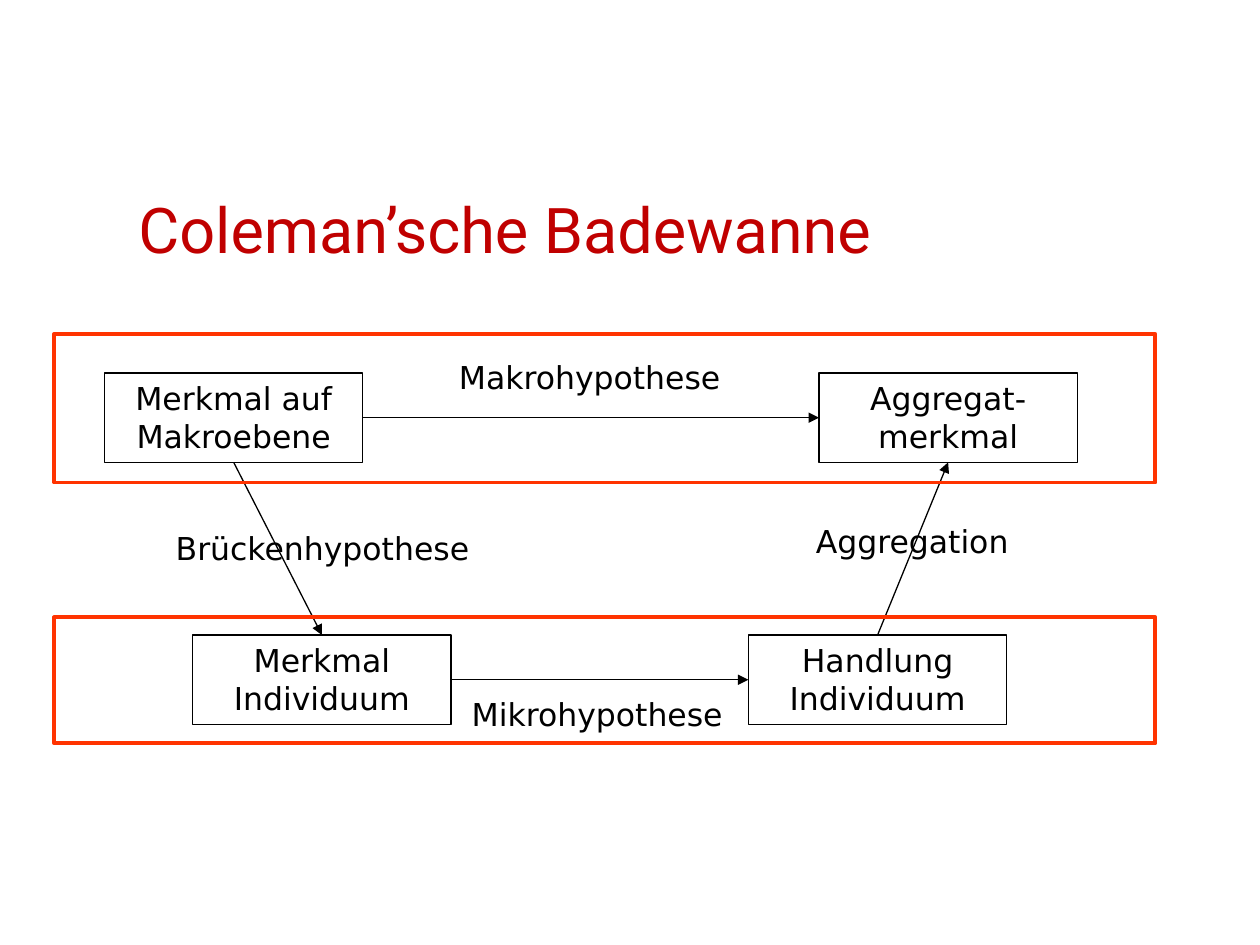
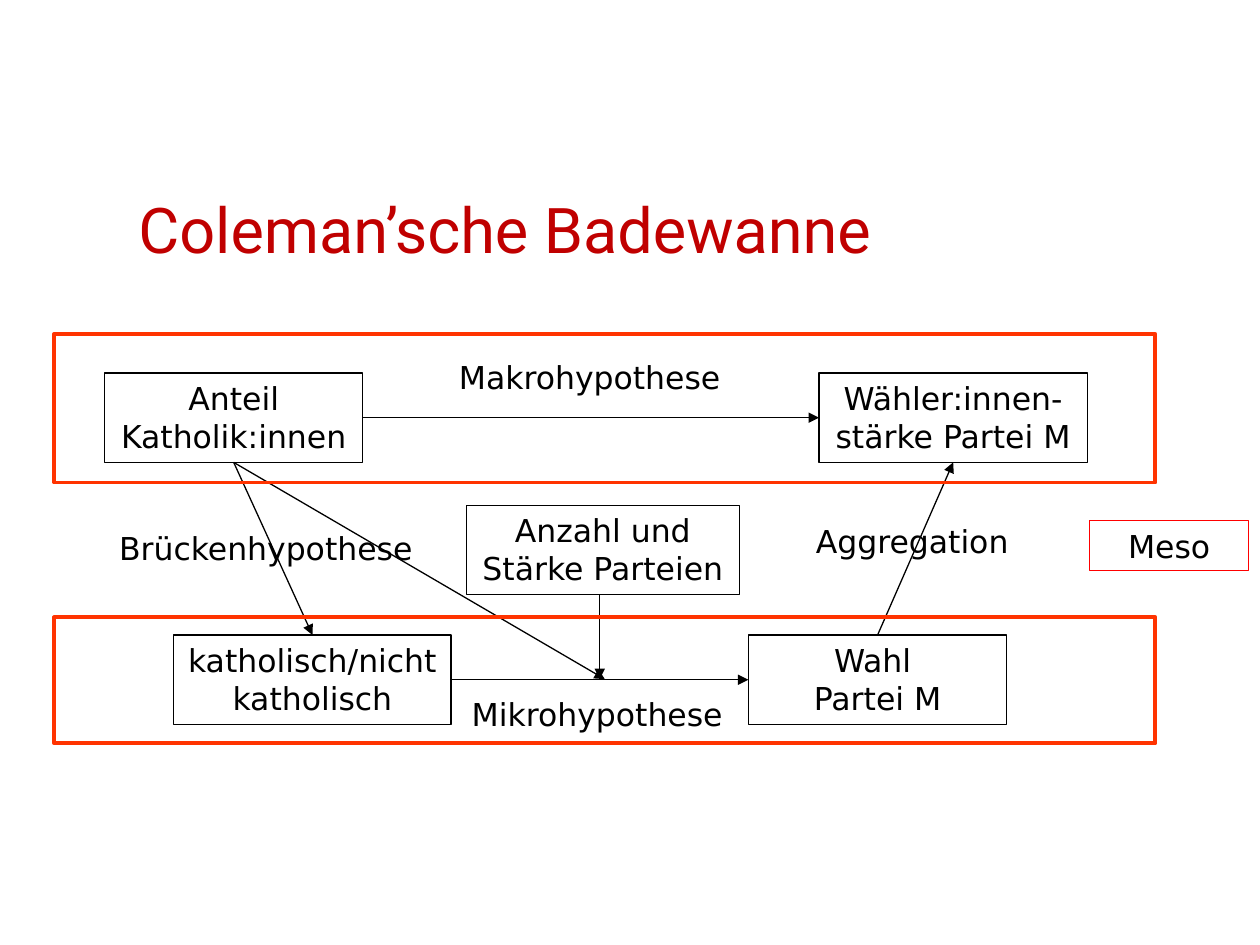
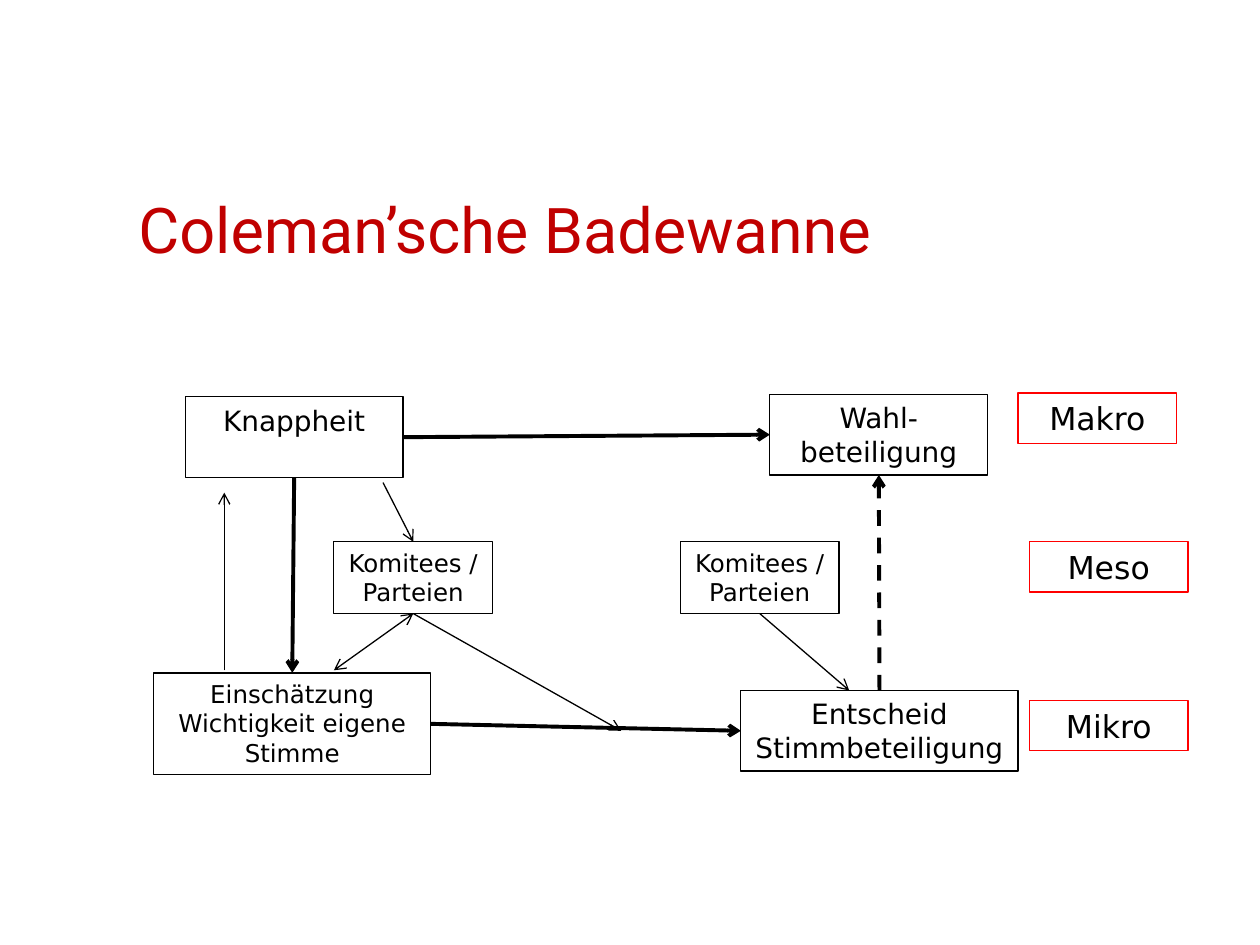
from lxml import etree
from pptx import Presentation
from pptx.dml.color import RGBColor
from pptx.enum.dml import MSO_LINE
from pptx.enum.shapes import MSO_CONNECTOR, MSO_SHAPE
from pptx.enum.text import MSO_ANCHOR, PP_ALIGN
from pptx.oxml.ns import qn
from pptx.util import Inches, Pt

STRAIGHT = MSO_CONNECTOR.STRAIGHT
RECTANGLE = MSO_SHAPE.RECTANGLE
CENTER, LEFT = PP_ALIGN.CENTER, PP_ALIGN.LEFT
TOP, BOTTOM = MSO_ANCHOR.TOP, MSO_ANCHOR.BOTTOM

COLORS = {"ink": "000000", "title": "C00000", "frame": "FF3300", "level": "FF0000"}
BODY_FONT, TITLE_FONT = "DejaVu Sans", "Roboto"
THIN, THICK = 0.75, 2.25

TITLE = "Coleman’sche Badewanne"
TITLE_AREA = (1, 0.91, 8, 1.25)
LEVEL_SIZE = (1.26, 0.4)

# Areas are left, top, width, height in inches
FRAMES = [(0.43, 2.65, 8.74, 1.18), (0.43, 4.9, 8.74, 1)]
SHARED_LABELS = [
    ("Makrohypothese", (3.49, 2.79, 2.38, 0.4)),
    ("Mikrohypothese", (3.27, 5.47, 2.94, 0.4)),
    ("Aggregation", (5.77, 4.09, 2.94, 0.4)),
]
TUB_ARROWS = [
    (("macro", "right"), ("aggregate", "left"), {}),
    (("individual", "right"), ("action", "left"), {}),
    (("macro", "bottom"), ("individual", "top"), {}),
    (("action", "top"), ("aggregate", "bottom"), {}),
]
OPEN = {"tail": "arrow"}
MAIN = {"tail": "arrow", "width": THICK}

# Nodes: name -> (text, area, text size)
# Arrows: start, end, style; an end is a node side or a point
PAGES = [
    {
        "frames": FRAMES,
        "nodes": {
            "macro": ("Merkmal auf Makroebene", (0.83, 2.96, 2.05, 0.71), 18),
            "aggregate": ("Aggregat-merkmal", (6.5, 2.96, 2.05, 0.71), 18),
            "individual": ("Merkmal Individuum", (1.53, 5.04, 2.05, 0.71), 18),
            "action": ("Handlung Individuum", (5.94, 5.04, 2.05, 0.71), 18),
        },
        "arrows": TUB_ARROWS,
        "labels": SHARED_LABELS + [("Brückenhypothese", (1.09, 4.15, 2.94, 0.4))],
        "levels": [],
    },
    {
        "frames": FRAMES,
        "nodes": {
            "macro": ("Anteil Katholik:innen", (0.83, 2.96, 2.05, 0.71), 18),
            "aggregate": ("Wähler:innen-stärke Partei M", (6.5, 2.96, 2.13, 0.71), 18),
            "individual": ("katholisch/nicht katholisch", (1.38, 5.04, 2.2, 0.71), 18),
            "action": ("Wahl \vPartei M", (5.94, 5.04, 2.05, 0.71), 18),
            "parties": ("Anzahl und Stärke Parteien", (3.7, 4.01, 2.17, 0.71), 18),
        },
        "arrows": TUB_ARROWS + [
            (("macro", "bottom"), (4.8, 5.39), {}),
            ((4.76, 4.72), (4.76, 5.39), {}),
        ],
        "labels": SHARED_LABELS + [("Brückenhypothese", (0.64, 4.15, 2.94, 0.4))],
        "levels": [("Meso", 8.65, 4.13)],
    },
    {
        "frames": [],
        "nodes": {
            "turnout": ("Wahl-beteiligung", (6.11, 3.13, 1.73, 0.64), 16),
            "closeness": ("Knappheit", (1.47, 3.15, 1.73, 0.64), 16),
            "decision": ("Entscheid Stimmbeteiligung", (5.88, 5.48, 2.2, 0.64), 16),
            "estimate": ("Einschätzung Wichtigkeit eigene Stimme",
                         (1.22, 5.34, 2.2, 0.81), 14),
            "committees": ("Komitees / Parteien", (2.65, 4.3, 1.26, 0.57), 14),
            "campaign": ("Komitees / Parteien", (5.4, 4.3, 1.26, 0.57), 14),
        },
        "arrows": [
            (("closeness", "right"), ("turnout", "left"), MAIN),
            (("decision", "top"), ("turnout", "bottom"), {**MAIN, "dashed": True}),
            (("closeness", "bottom"), ("estimate", "top"), MAIN),
            (("estimate", "right"), ("decision", "left"), MAIN),
            ((3.04, 3.83), ("committees", "top"), OPEN),
            (("committees", "bottom"), (2.65, 5.32), {**OPEN, "head": "arrow"}),
            (("committees", "bottom"), (4.93, 5.8), OPEN),
            (("campaign", "bottom"), (6.74, 5.48), OPEN),
            ((1.78, 5.32), (1.78, 3.91), OPEN),
        ],
        "labels": [],
        "levels": [("Makro", 8.08, 3.12), ("Meso", 8.17, 4.3), ("Mikro", 8.17, 5.56)],
    },
]


def color(name):
    return RGBColor.from_string(COLORS[name])


def write(box, text, size=18, font=BODY_FONT, ink="ink", align=CENTER, anchor=TOP):
    frame = box.text_frame
    frame.word_wrap = True
    frame.vertical_anchor = anchor
    para = frame.paragraphs[0]
    para.text = text
    para.alignment = align
    para.font.size = Pt(size)
    para.font.name = font
    para.font.color.rgb = color(ink)


def add_text(page, text, area, **style):
    write(page.shapes.add_textbox(*map(Inches, area)), text, **style)


def add_box(page, area, text="", line="ink", width=THIN, size=18):
    box = page.shapes.add_shape(RECTANGLE, *map(Inches, area))
    box.shadow.inherit = False
    box.fill.background()
    box.line.color.rgb = color(line)
    box.line.width = Pt(width)
    if text:
        write(box, text, size=size)


def locate(end, nodes):
    """Turn a (node, side) pair into a point; leave a point as it is."""
    if end[0] not in nodes:
        return end
    name, side = end
    left, top, width, height = nodes[name][1]
    return {
        "top": (left + width / 2, top),
        "bottom": (left + width / 2, top + height),
        "left": (left, top + height / 2),
        "right": (left + width, top + height / 2),
    }[side]


def add_arrow(page, start, end, head=None, tail="triangle", width=THIN, dashed=False):
    arrow = page.shapes.add_connector(STRAIGHT, *map(Inches, (*start, *end)))
    arrow.line.color.rgb = color("ink")
    arrow.line.width = Pt(width)
    if dashed:
        arrow.line.dash_style = MSO_LINE.DASH
    outline = arrow.line._get_or_add_ln()
    for tag, kind in (("a:headEnd", head), ("a:tailEnd", tail)):
        if kind:
            etree.SubElement(outline, qn(tag), type=kind)
    etree.SubElement(arrow._element.spPr, qn("a:effectLst"))


def build_page(deck, content):
    page = deck.slides.add_slide(deck.slide_layouts[6])
    add_text(page, TITLE, TITLE_AREA, size=36, font=TITLE_FONT, ink="title",
             align=LEFT, anchor=BOTTOM)
    nodes = content["nodes"]
    for text, area, size in nodes.values():
        add_box(page, area, text, size=size)
    for start, end, style in content["arrows"]:
        add_arrow(page, locate(start, nodes), locate(end, nodes), **style)
    for text, area in content["labels"]:
        add_text(page, text, area)
    for area in content["frames"]:
        add_box(page, area, line="frame", width=THICK)
    for text, left, top in content["levels"]:
        add_box(page, (left, top, *LEVEL_SIZE), text, line="level")


def main():
    deck = Presentation()
    deck.slide_width, deck.slide_height = Inches(10), Inches(7.5)
    for content in PAGES:
        build_page(deck, content)
    deck.save("out.pptx")


if __name__ == "__main__":
    main()
